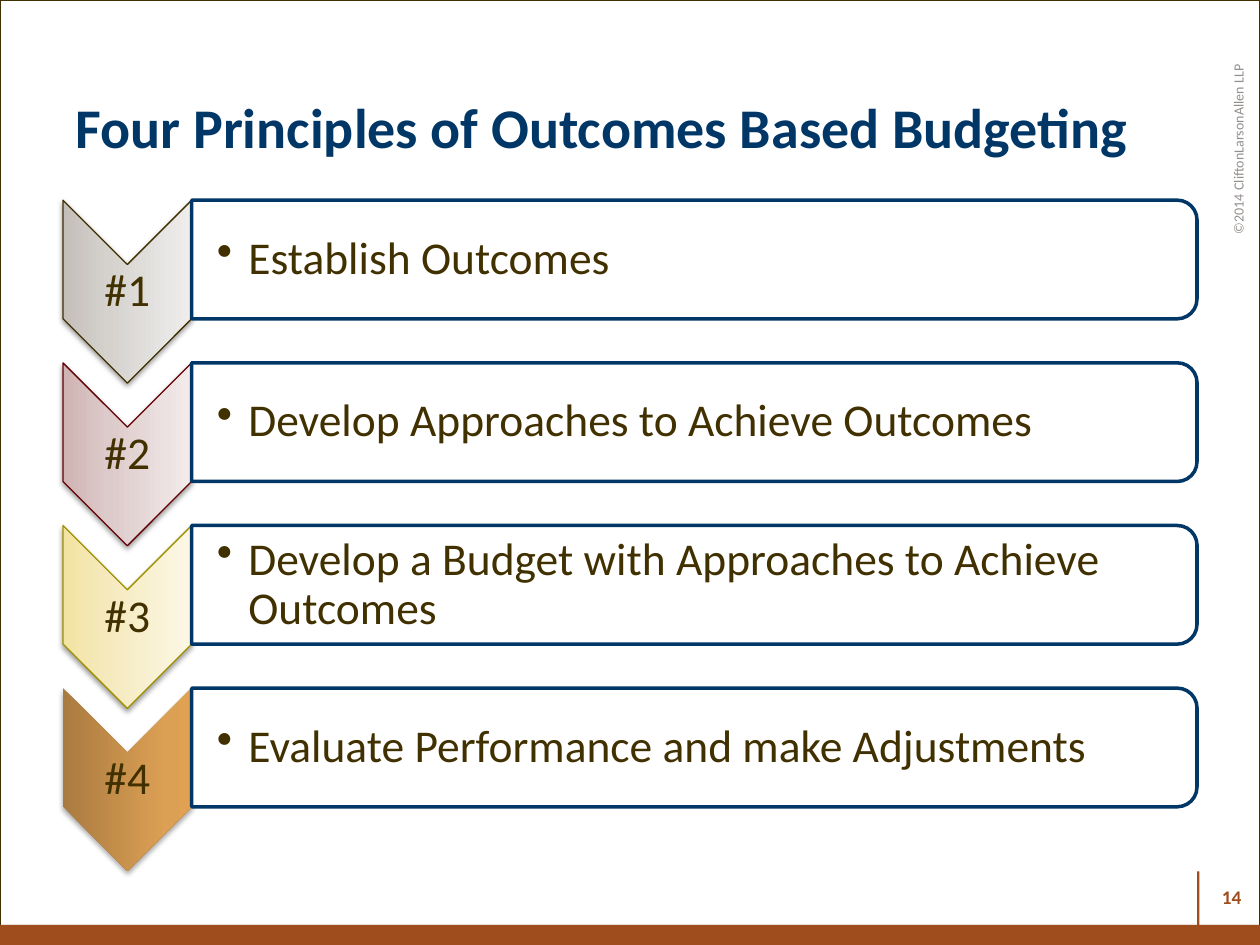
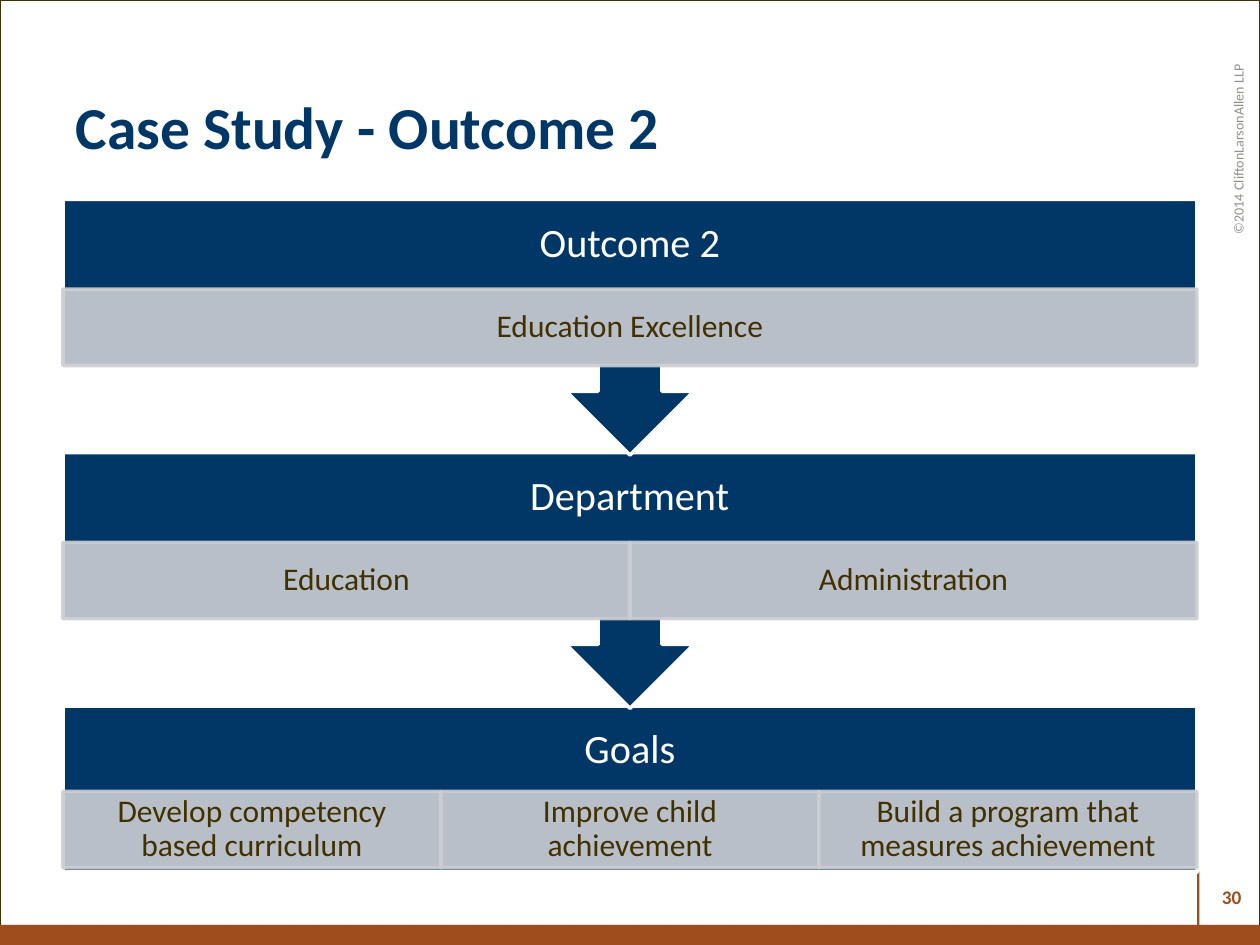
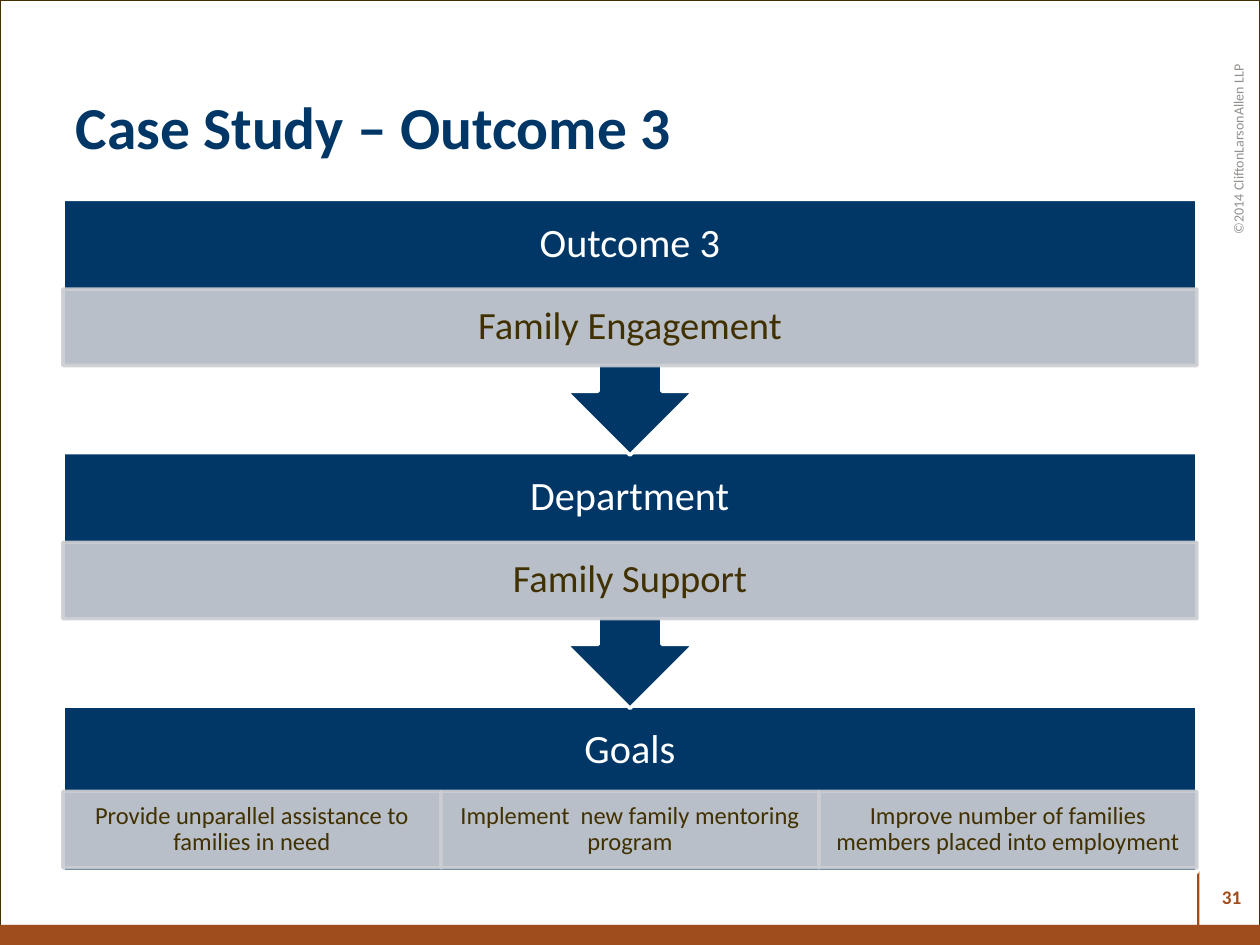
from copy import deepcopy

from lxml.etree import SubElement
from pptx import Presentation
from pptx.dml.color import RGBColor
from pptx.enum.shapes import MSO_SHAPE
from pptx.enum.text import MSO_ANCHOR, MSO_AUTO_SIZE, PP_ALIGN
from pptx.oxml.ns import qn
from pptx.util import Pt

FONT = "Calibri"
COLORS = {
    "navy": "003767",
    "brown": "413000",
    "rust": "A04D1D",
    "gray": "938F8C",
    "cell": "CCCED3",
    "white": "FFFFFF",
    "black": "000000",
}
LEFT, WIDTH = 36, 648

PRINCIPLES = [
    ("Establish Outcomes", "402F00", [(0, "C4BEB9"), (0.35, "D5D2CE"), (1, "EFEEED")]),
    ("Develop Approaches to Achieve Outcomes", "640003",
     [(0, "D0B3B3"), (0.35, "DDCACA"), (1, "F3EBEB")]),
    ("Develop a Budget with Approaches to Achieve Outcomes", "A09100",
     [(0, "F3E3A2"), (0.35, "F5EABE"), (1, "FCF7E5")]),
    ("Evaluate Performance and make Adjustments", None,
     [(0, "AA7B41"), (0.8, "DCA054"), (1, "E0A152")]),
]
CASE_STUDIES = [
    ("Case Study - Outcome 2", "30", [
        ("Outcome 2", 18, ["Education Excellence"]),
        ("Department", 18, ["Education", "Administration"]),
        ("Goals", 18, ["Develop competency based curriculum",
                       "Improve child achievement",
                       "Build a program that measures achievement"]),
    ]),
    ("Case Study – Outcome 3", "31", [
        ("Outcome 3", 22, ["Family Engagement"]),
        ("Department", 22, ["Family Support"]),
        ("Goals", 14, ["Provide unparallel assistance to families in need",
                       "Implement  new family mentoring program",
                       "Improve number of families members placed into employment"]),
    ]),
]


def write_text(shape, text, size=18, color="brown", bold=False, align=PP_ALIGN.CENTER,
               insets=(7.2, 3.6, 7.2, 3.6), spacing=None, bullet_indent=None):
    """Write one formatted, vertically centred paragraph into a shape."""
    frame = shape.text_frame
    frame.word_wrap = True
    frame.auto_size = MSO_AUTO_SIZE.NONE
    frame.vertical_anchor = MSO_ANCHOR.MIDDLE
    (frame.margin_left, frame.margin_top,
     frame.margin_right, frame.margin_bottom) = map(Pt, insets)
    paragraph = frame.paragraphs[0]
    if bullet_indent:
        properties = paragraph._p.get_or_add_pPr()
        properties.set("marL", str(Pt(bullet_indent)))
        properties.set("indent", str(-Pt(bullet_indent)))
        SubElement(properties, qn("a:buChar"), char="•")
    paragraph.alignment = align
    paragraph.line_spacing = spacing
    run = paragraph.add_run()
    run.text = text
    run.font.name = FONT
    run.font.size = Pt(size)
    run.font.bold = bold
    run.font.color.rgb = RGBColor.from_string(COLORS[color])


def add_label(slide, box, text, rotation=0, **text_format):
    """Add a text box with formatted text."""
    label = slide.shapes.add_textbox(*map(Pt, box))
    label.rotation = rotation
    write_text(label, text, **text_format)


def add_box(slide, kind, box, fill=None, line=None, line_width=2):
    """Add a flat preset shape with optional hex fill and outline."""
    shape = slide.shapes.add_shape(kind, *map(Pt, box))
    shape.shadow.inherit = False
    if fill:
        shape.fill.solid()
        shape.fill.fore_color.rgb = RGBColor.from_string(fill)
    else:
        shape.fill.background()
    if line:
        shape.line.color.rgb = RGBColor.from_string(line)
        shape.line.width = Pt(line_width)
    else:
        shape.line.fill.background()
    return shape


def add_turned_box(slide, kind, box, **style):
    """Add a shape turned a quarter clockwise that covers the given box."""
    left, top, width, height = box
    shift = (width - height) / 2
    shape = add_box(slide, kind, (left + shift, top - shift, height, width), **style)
    shape.rotation = 90
    return shape


def add_shadow(shape, opacity, distance):
    """Give a shape a soft shadow straight below it."""
    effects = shape._element.spPr.find(qn("a:effectLst"))
    shadow = SubElement(effects, qn("a:outerShdw"), blurRad=str(Pt(3.1)),
                        dist=str(Pt(distance)), dir="5400000", rotWithShape="0")
    color = SubElement(shadow, qn("a:srgbClr"), val=COLORS["black"])
    SubElement(color, qn("a:alpha"), val=str(opacity * 1000))


def set_gradient(shape, stops):
    """Fill a shape with a three-stop gradient along its upward axis."""
    shape.fill.gradient()
    shape.fill.gradient_angle = 90
    stop_list = shape._element.spPr.find(".//" + qn("a:gsLst"))
    stop_list.insert(1, deepcopy(stop_list[0]))
    for stop, (position, color) in zip(shape.fill.gradient_stops, stops):
        stop.position = position
        stop.color.rgb = RGBColor.from_string(color)


def set_opacity(shape, percent):
    """Make the fill and outline of a shape partly transparent."""
    for color in shape._element.spPr.iter(qn("a:srgbClr")):
        SubElement(color, qn("a:alpha"), val=str(percent * 1000))


def add_framed_slide(presentation, title, number, title_size):
    """Add a slide with its border, copyright line, footer, number and title."""
    slide = presentation.slides.add_slide(presentation.slide_layouts[5])
    add_box(slide, MSO_SHAPE.RECTANGLE, (0, 0, 720, 540),
            line=COLORS["brown"], line_width=0.75)
    add_label(slide, (623.5, 101.5, 168, 24.5), "©2014 CliftonLarsonAllen LLP",
              rotation=270, size=8, color="gray", align=PP_ALIGN.RIGHT)
    footer = add_box(slide, MSO_SHAPE.RECTANGLE, (0, 528.5, 720, 11.5), fill=COLORS["rust"])
    add_shadow(footer, 35, 1.8)
    add_box(slide, MSO_SHAPE.RECTANGLE, (684, 498, 1.4, 42), fill=COLORS["rust"])
    add_label(slide, (677, 498, 39.5, 29), number, size=11, color="rust", bold=True,
              align=PP_ALIGN.RIGHT)
    heading = slide.shapes.title
    heading.left, heading.top, heading.width, heading.height = map(Pt, (LEFT, 36, WIDTH, 72))
    write_text(heading, title, size=title_size, color="navy", bold=True, align=PP_ALIGN.LEFT)
    return slide


def add_principle(slide, index, text, outline, stops):
    """Add a numbered chevron and the rounded bar beside it."""
    top = 114.4 + 92.95 * index
    chevron_width = 73.5
    bar_left = LEFT + chevron_width
    chevron = add_turned_box(slide, MSO_SHAPE.CHEVRON, (LEFT, top, chevron_width, 104.5),
                             line=outline, line_width=0.75)
    set_gradient(chevron, stops)
    add_shadow(chevron, 38 if outline else 35, 1.6)
    add_label(slide, (LEFT, top + 36.8, chevron_width, 31.5), f"#{index + 1}", size=26,
              insets=(1.4,) * 4, spacing=0.9)
    add_turned_box(slide, MSO_SHAPE.ROUND_2_SAME_RECTANGLE, (bar_left, top, 574.5, 67.8),
                   fill=COLORS["white"], line=COLORS["navy"])
    add_label(slide, (bar_left, top + 3.3, 571.5, 61.2), text, size=26, align=PP_ALIGN.LEFT,
              insets=(14.4, 1.4, 1.4, 1.4), spacing=0.9, bullet_indent=18)


def add_stage(slide, index, heading, size, cells, is_last):
    """Add a navy stage with its heading and a row of equal cells."""
    top = 113.9 + 144.7 * index
    kind = MSO_SHAPE.RECTANGLE if is_last else MSO_SHAPE.UP_ARROW_CALLOUT
    block = add_box(slide, kind, (LEFT, top, WIDTH, 95 if is_last else 146.2),
                    fill=COLORS["navy"], line=COLORS["white"])
    block.rotation = 0 if is_last else 180
    add_label(slide, (LEFT, top, WIDTH, 51.3), heading, size=23, color="white",
              insets=(13,) * 4, spacing=0.9)
    cell_top = top + (49 if is_last else 51.3)
    cell_width = WIDTH / len(cells)
    for column, text in enumerate(cells):
        cell = add_box(slide, MSO_SHAPE.RECTANGLE,
                       (LEFT + column * cell_width, cell_top, cell_width, 43.7),
                       fill=COLORS["cell"], line=COLORS["cell"])
        set_opacity(cell, 90)
        write_text(cell, text, size=size, spacing=0.9,
                   insets=(size * 0.56, size * 0.11) * 2)


def main():
    """Build the three slides and save them."""
    presentation = Presentation()
    presentation.slide_width, presentation.slide_height = Pt(720), Pt(540)
    slide = add_framed_slide(presentation, "Four Principles of Outcomes Based Budgeting",
                             "14", 32)
    for index, principle in enumerate(PRINCIPLES):
        add_principle(slide, index, *principle)
    for title, number, stages in CASE_STUDIES:
        slide = add_framed_slide(presentation, title, number, 34)
        last = len(stages) - 1
        for index in range(last, -1, -1):
            add_stage(slide, index, *stages[index], is_last=index == last)
    presentation.save("out.pptx")


if __name__ == "__main__":
    main()
